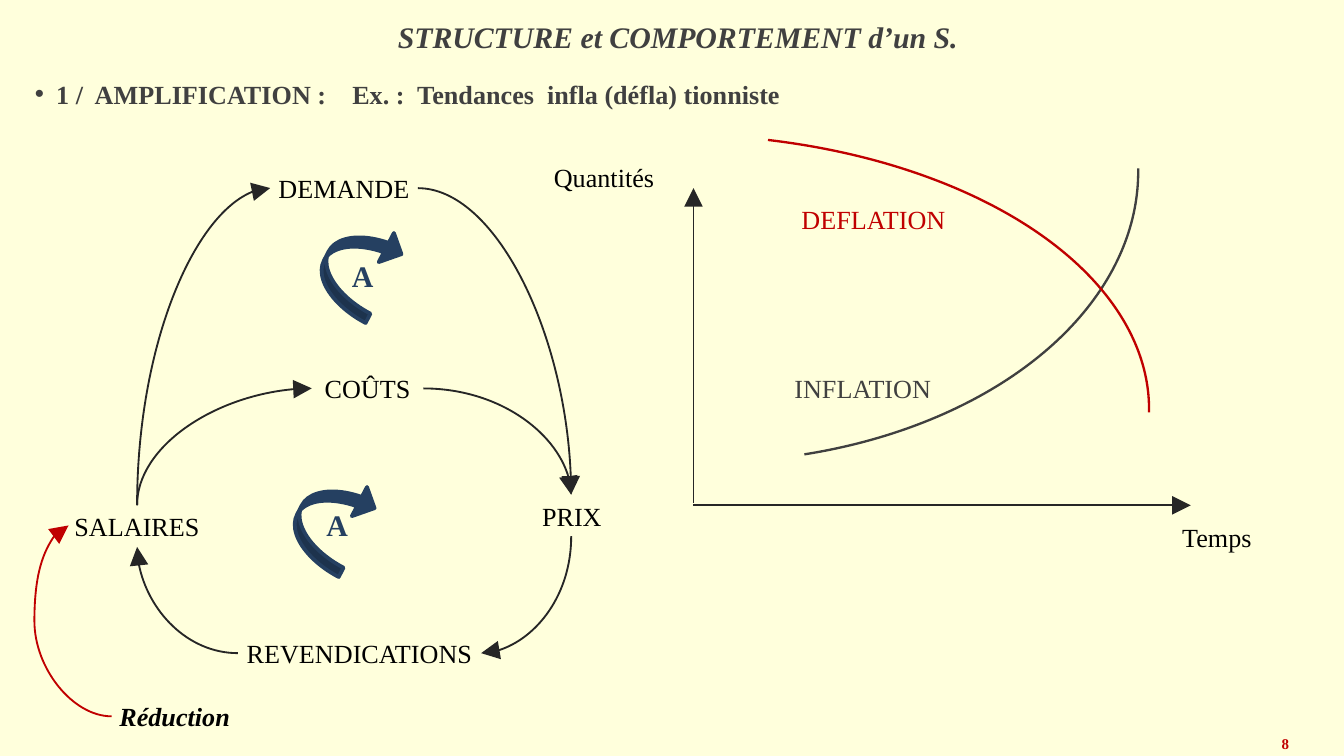
"""Build a slide on amplification loops with a cause diagram and a trend chart."""
from lxml.etree import SubElement
from pptx import Presentation
from pptx.dml.color import RGBColor
from pptx.enum.shapes import MSO_CONNECTOR, MSO_SHAPE
from pptx.enum.text import MSO_ANCHOR, MSO_AUTO_SIZE, PP_ALIGN
from pptx.oxml.ns import qn
from pptx.util import Inches, Pt

THEME = {
    "font": "Times New Roman", "background": "FFFFDC", "ink": "000000",
    "line": "262626", "grey": "404040", "red": "C00000", "navy": "254061",
    "title": 16, "body": 14, "number": 8, "thin": 1, "trend": 1.25, "outline": 2,
}

TITLE = "STRUCTURE et COMPORTEMENT d’un S."
BULLET = " 1 /  AMPLIFICATION :    Ex. :  Tendances  infla (défla) tionniste"
LABEL_HEIGHT = 0.32
LABELS = [
    ("DEMANDE", 2.01, 1.24, 1.1, {}),
    ("COÛTS", 2.32, 2.73, 0.83, {}),
    ("PRIX", 3.98, 3.68, 0.55, {}),
    ("SALAIRES", 0.51, 3.76, 1.02, {}),
    ("REVENDICATIONS", 1.77, 4.7, 1.81, {}),
    ("Réduction", 0.83, 5.17, 0.94, {"bold": True, "italic": True}),
    ("Quantités", 4.06, 1.16, 0.87, {}),
    ("Temps", 8.7, 3.84, 0.71, {}),
    ("DEFLATION", 5.87, 1.47, 1.26, {"color": "red"}),
    ("INFLATION", 5.79, 2.73, 1.26, {"color": "grey"}),
]
AXES = [((5.16, 3.74), (5.16, 1.4)), ((5.16, 3.76), (8.86, 3.76))]
SIDEWAYS_LINKS = [
    ((3.11, 1.4), (4.25, 3.68)),
    ((3.15, 2.89), (4.25, 3.68)),
    ((1.77, 4.86), (1.02, 4.07)),
]
UPRIGHT_LINKS = [
    ((4.25, 3.99), (3.58, 4.86)),
    ((1.02, 3.76), (2.01, 1.4)),
    ((1.02, 3.76), (2.32, 2.89)),
]
REDUCTION_LINK = ((0.83, 5.33), (0.51, 3.91))
REDUCTION_BEND = 179400
LOOPS = [((2.42, 1.63), (2.52, 1.87)), ((2.22, 3.52), (2.33, 3.72))]
TRENDS = [
    ((2.01, -0.89, 6.46, 4.33), "grey", True),
    ((1.46, 1, 7.09, 4.09), "red", False),
]
TREND_ANGLES = (173.7, 0.23)
LOOP_SHAPE = (0.16, 0.5, 0.25)


def rgb(name):
    return RGBColor.from_string(THEME[name])


def write(frame, text, size="body", color="ink", bold=False, italic=False,
          align=PP_ALIGN.CENTER, anchor=MSO_ANCHOR.TOP, inset=None,
          auto_size=MSO_AUTO_SIZE.NONE):
    frame.word_wrap = True
    frame.auto_size = auto_size
    frame.vertical_anchor = anchor
    if inset is not None:
        frame.margin_left = frame.margin_right = Inches(inset)
        frame.margin_top = frame.margin_bottom = Inches(inset)
    paragraph = frame.paragraphs[0]
    paragraph.alignment = align
    paragraph.space_before = Pt(0)
    run = paragraph.add_run()
    run.text = text
    run.font.name = THEME["font"]
    run.font.size = Pt(THEME[size])
    run.font.color.rgb = rgb(color)
    run.font.bold = bold
    run.font.italic = italic
    return paragraph


def place(shape, *box):
    shape.left, shape.top, shape.width, shape.height = map(Inches, box)
    return shape


def add_text(slide, text, box, **text_format):
    shape = slide.shapes.add_textbox(*map(Inches, box))
    write(shape.text_frame, text, **text_format)


def flip(shape, *directions):
    for direction in directions:
        shape._element.spPr.find(qn("a:xfrm")).set(direction, "1")


def add_arrow(slide, kind, box, color="line"):
    left, top, right, bottom = map(Inches, box)
    connector = slide.shapes.add_connector(kind, left, top, right, bottom)
    connector.line.color.rgb = rgb(color)
    connector.line.width = Pt(THEME["thin"])
    SubElement(connector.line._get_or_add_ln(), qn("a:tailEnd"),
               type="triangle", w="lg", len="lg")
    SubElement(connector._element.spPr, qn("a:effectLst"))
    return connector


def add_curve(slide, start, end, upright=False, bend=None, color="line"):
    (x1, y1), (x2, y2) = start, end
    width, height = abs(x2 - x1), abs(y2 - y1)
    if upright:
        width, height = height, width
    left, top = (x1 + x2 - width) / 2, (y1 + y2 - height) / 2
    box = (left, top, left + width, top + height)
    connector = add_arrow(slide, MSO_CONNECTOR.CURVE, box, color)
    properties = connector._element.spPr
    geometry = properties.find(qn("a:prstGeom"))
    if bend is None:
        geometry.set("prst", "curvedConnector2")
    else:
        SubElement(geometry.find(qn("a:avLst")), qn("a:gd"),
                   name="adj1", fmla=f"val {bend}")
    rising = y2 < y1
    degrees = 90 if upright else 180 if rising else 0
    properties.find(qn("a:xfrm")).set("rot", str(degrees * 60000))
    if upright and rising:
        flip(connector, "flipH", "flipV")


def add_outline(slide, kind, box, color, width, adjustments):
    shape = slide.shapes.add_shape(kind, *map(Inches, box))
    shape.shadow.inherit = False
    shape.line.color.rgb = rgb(color)
    shape.line.width = Pt(THEME[width])
    for index, value in enumerate(adjustments):
        shape.adjustments[index] = value
    return shape


def add_headings(slide):
    title = place(slide.shapes.title, 0.2, 0.14, 9.69, 0.27)
    write(title.text_frame, TITLE, size="title", color="grey", bold=True,
          italic=True, anchor=MSO_ANCHOR.MIDDLE)
    body = place(slide.placeholders[1], 0.16, 0.53, 9.69, 0.31)
    paragraph = write(body.text_frame, BULLET, color="grey", bold=True,
                      align=PP_ALIGN.LEFT)
    properties = paragraph._p.get_or_add_pPr()
    properties.set("marL", str(Inches(0.11)))
    properties.set("indent", str(Inches(-0.11)))
    SubElement(properties, qn("a:buChar"), char="•")


def add_loops(slide):
    for (left, top), (text_left, text_top) in LOOPS:
        arrow = add_outline(slide, MSO_SHAPE.CURVED_LEFT_ARROW,
                            (left, top, 0.49, 0.7), "navy", "outline", LOOP_SHAPE)
        arrow.fill.solid()
        arrow.fill.fore_color.rgb = rgb("navy")
        arrow.rotation = 27.5
        flip(arrow, "flipH", "flipV")
        add_text(slide, "A", (text_left, text_top, 0.31, 0.37), size="title",
                 color="navy", bold=True, align=PP_ALIGN.LEFT,
                 auto_size=MSO_AUTO_SIZE.SHAPE_TO_FIT_TEXT)


def add_trends(slide):
    for start, end in AXES:
        add_arrow(slide, MSO_CONNECTOR.STRAIGHT, start + end)
    for box, color, mirrored in TRENDS:
        arc = add_outline(slide, MSO_SHAPE.ARC, box, color, "trend", TREND_ANGLES)
        arc.fill.background()
        if mirrored:
            flip(arc, "flipV")


def main():
    presentation = Presentation()
    presentation.slide_width = Inches(10)
    presentation.slide_height = presentation.slide_width * 9 // 16
    slide = presentation.slides.add_slide(presentation.slide_layouts[1])
    slide.background.fill.solid()
    slide.background.fill.fore_color.rgb = rgb("background")
    add_headings(slide)
    add_text(slide, "8", (9.33, 5.44, 0.47, 0.18), size="number", color="red",
             bold=True, anchor=MSO_ANCHOR.MIDDLE)
    for text, left, top, width, text_format in LABELS:
        add_text(slide, text, (left, top, width, LABEL_HEIGHT), inset=0.04,
                 auto_size=MSO_AUTO_SIZE.SHAPE_TO_FIT_TEXT, **text_format)
    for start, end in SIDEWAYS_LINKS:
        add_curve(slide, start, end)
    for start, end in UPRIGHT_LINKS:
        add_curve(slide, start, end, upright=True)
    add_curve(slide, *REDUCTION_LINK, bend=REDUCTION_BEND, color="red")
    add_loops(slide)
    add_trends(slide)
    presentation.save("out.pptx")


if __name__ == "__main__":
    main()
